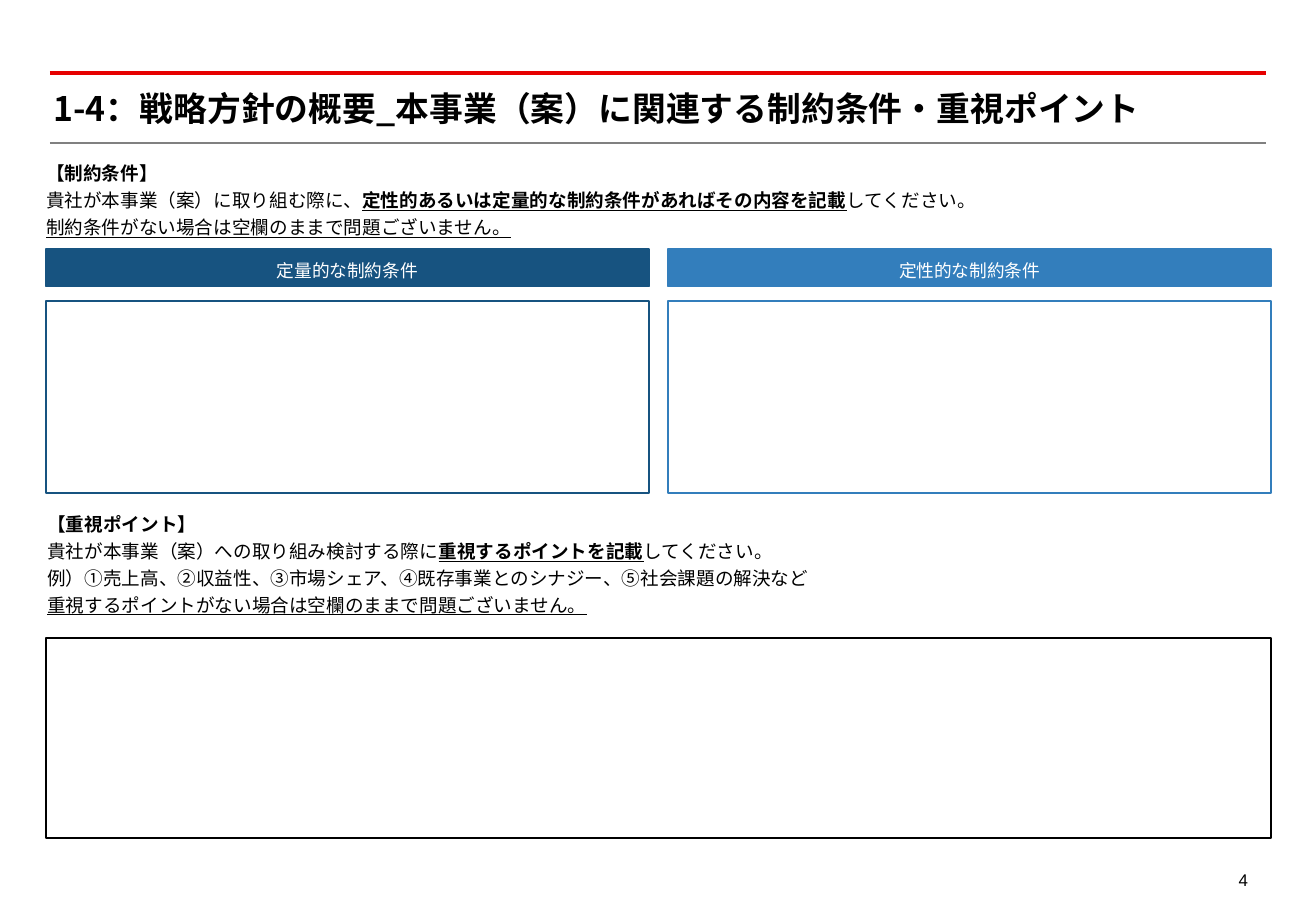
import pptx
import pptx.util
import pptx.dml.color
import pptx.enum.shapes
import pptx.enum.text
import pptx.oxml.ns
import lxml.etree
from pptx.util import Inches

# Content: each line is a list of (text, style), with b = bold, u = underlined
TITLE = "1-4：戦略方針の概要_本事業（案）に関連する制約条件・重視ポイント"
CONSTRAINTS = [
    [("【制約条件】", "b")],
    [("貴社が本事業（案）に取り組む際に、", ""),
     ("定性的あるいは定量的な制約条件があればその内容を記載", "bu"),
     ("してください。", "")],
    [("制約条件がない場合は空欄のままで問題ございません。", "u")],
]
PRIORITIES = [
    [("【重視ポイント】", "b")],
    [("貴社が本事業（案）への取り組み検討する際に", ""),
     ("重視するポイントを記載", "bu"),
     ("してください。", "")],
    [("例）①売上高、②収益性、③市場シェア、④既存事業とのシナジー、⑤社会課題の解決など", "")],
    [("重視するポイントがない場合は空欄のままで問題ございません。", "u")],
]
COLUMNS = [("定量的な制約条件", "navy"), ("定性的な制約条件", "blue")]
PAGE_NUMBER = "4"

THEME = {
    "font": "Noto Sans CJK JP", "number_font": "Arial",
    "title": 20, "body": 11, "header": 10.5, "number": 10,
    "black": "000000", "white": "FFFFFF", "red": "E60000",
    "gray": "808080", "navy": "175380", "blue": "337EBC",
}
LEFT, WIDTH, GAP = 0.38, 10.08, 0.16
COLUMN_WIDTH = (WIDTH - GAP) / 2
ALIGN = pptx.enum.text.PP_ALIGN
ANCHOR = pptx.enum.text.MSO_ANCHOR

presentation = pptx.Presentation()
presentation.slide_width, presentation.slide_height = Inches(10.83), Inches(7.5)
slide = presentation.slides.add_slide(presentation.slide_layouts[6])


def color(name):
    return pptx.dml.color.RGBColor.from_string(THEME[name])


def write(frame, lines, size, ink="black", font="font", align=ALIGN.LEFT,
          spacing=1.2, inset=0.0, anchor=ANCHOR.TOP, wrap=True):
    frame.word_wrap = wrap
    frame.vertical_anchor = anchor
    frame.margin_left = frame.margin_right = Inches(inset)
    frame.margin_top = frame.margin_bottom = Inches(inset)
    for index, line in enumerate(lines):
        paragraph = frame.add_paragraph() if index else frame.paragraphs[0]
        paragraph.alignment = align
        paragraph.line_spacing = spacing
        paragraph.font.size = pptx.util.Pt(THEME[size])
        paragraph.font.color.rgb = color(ink)
        paragraph.font.name = THEME[font]
        # East Asian typeface
        defaults = paragraph._p.pPr.find(pptx.oxml.ns.qn("a:defRPr"))
        lxml.etree.SubElement(defaults, pptx.oxml.ns.qn("a:ea"), typeface=THEME[font])
        for text, style in line:
            run = paragraph.add_run()
            run.text = text
            if "b" in style:
                run.font.bold = True
            if "u" in style:
                run.font.underline = True


def add_text(left, top, width, height, lines, size, **options):
    box = slide.shapes.add_textbox(*map(Inches, (left, top, width, height)))
    write(box.text_frame, lines, size, **options)


def add_box(left, top, width, height, line, fill=None):
    shape = slide.shapes.add_shape(
        pptx.enum.shapes.MSO_SHAPE.RECTANGLE, *map(Inches, (left, top, width, height)))
    shape.shadow.inherit = False
    shape.line.color.rgb = color(line)
    shape.line.width = pptx.util.Pt(1)
    if fill:
        shape.fill.solid()
        shape.fill.fore_color.rgb = color(fill)
    else:
        shape.fill.background()
    return shape


def add_rule(top, ink, weight):
    rule = slide.shapes.add_connector(
        pptx.enum.shapes.MSO_CONNECTOR.STRAIGHT, *map(Inches, (0.41, top, 10.42, top)))
    rule.line.color.rgb = color(ink)
    rule.line.width = pptx.util.Pt(weight)
    lxml.etree.SubElement(rule._element.spPr, pptx.oxml.ns.qn("a:effectLst"))


# Title between two rules
add_rule(0.6, "red", 2)
add_rule(1.18, "gray", 1.25)
add_text(0.44, 0.72, 9.91, 0.34, [[(TITLE, "b")]], "title", spacing=1.0, anchor=ANCHOR.MIDDLE)

# Constraints: instructions and two answer columns
add_text(LEFT, 1.3, WIDTH, 0.64, CONSTRAINTS, "body")
for index, (heading, ink) in enumerate(COLUMNS):
    left = LEFT + index * (COLUMN_WIDTH + GAP)
    header = add_box(left, 2.05, COLUMN_WIDTH, 0.31, ink, fill=ink)
    write(header.text_frame, [[(heading, "")]], "header", ink="white",
          align=ALIGN.CENTER, inset=0.02, anchor=ANCHOR.MIDDLE, wrap=False)
    add_box(left, 2.48, COLUMN_WIDTH, 1.58, ink)

# Priorities: instructions and one answer box
add_text(LEFT + 0.01, 4.19, WIDTH, 0.86, PRIORITIES, "body")
add_box(LEFT, 5.25, WIDTH, 1.65, "black")

# Page number
add_text(9.83, 7.13, 0.44, 0.2, [[(PAGE_NUMBER, "")]], "number",
         font="number_font", align=ALIGN.RIGHT)

presentation.save("out.pptx")
